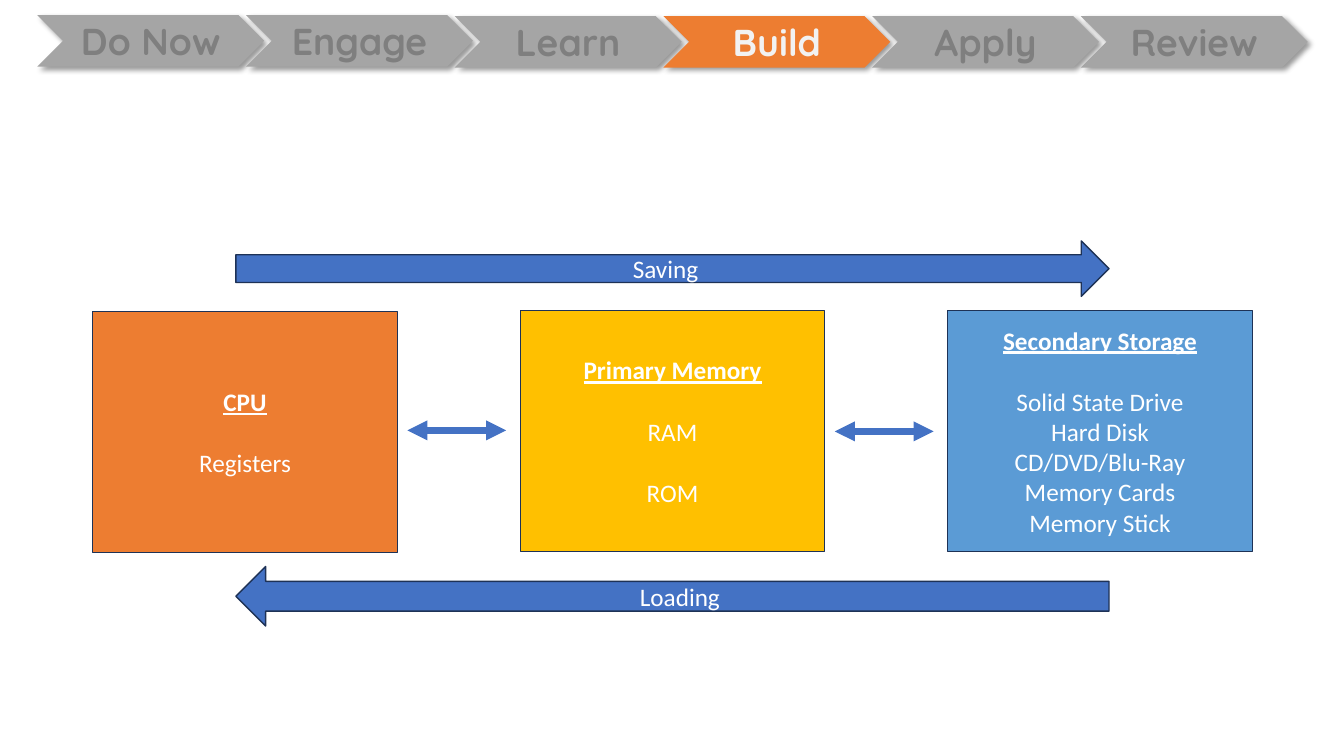
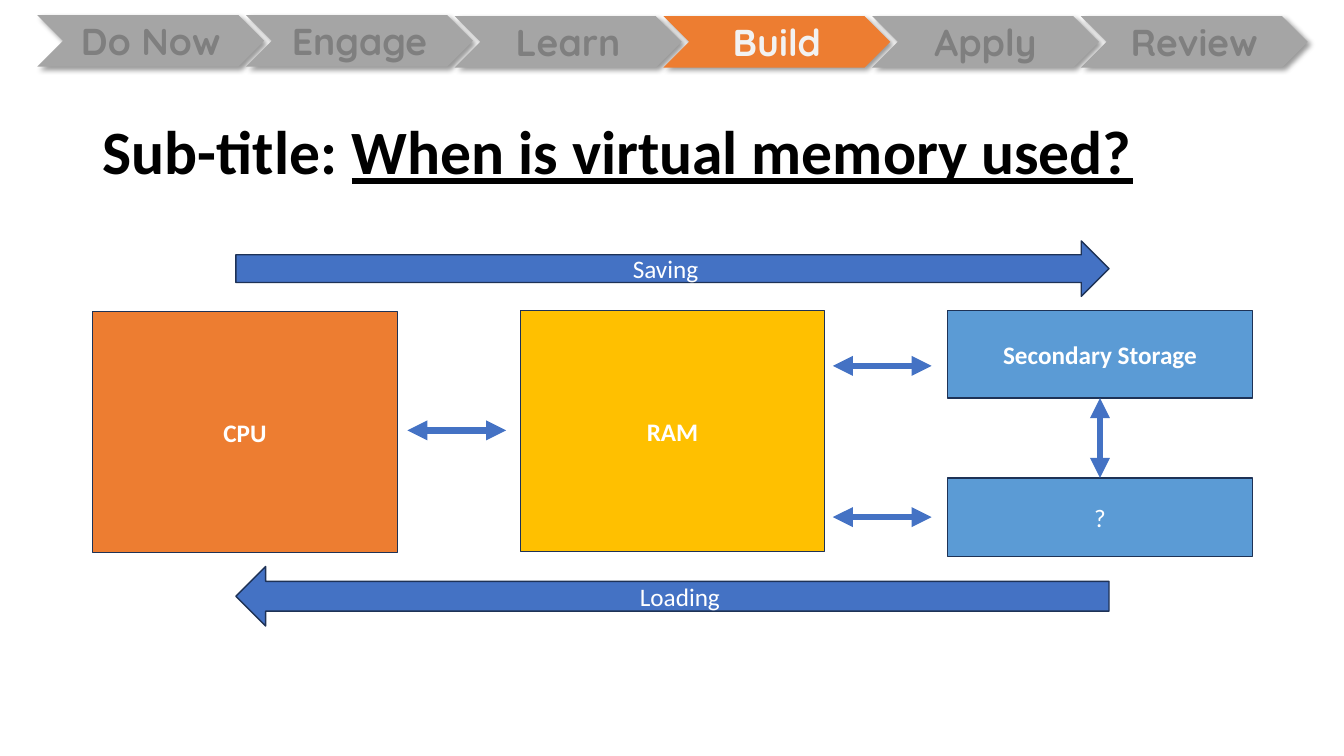
"""Build two slides on how data moves between CPU, memory and storage."""
import pptx
import pptx.dml.color
import pptx.enum.shapes
import pptx.enum.text
import pptx.oxml
import pptx.oxml.ns
import pptx.util

HUES = {
    "grey": "A5A5A5", "dim": "7F7F7F", "pale": "F2F2F2", "white": "FFFFFF",
    "black": "000000", "orange": "ED7D31", "gold": "FFC000",
    "sky": "5B9BD5", "blue": "4472C4", "edge": "1E3256",
}
FONT = "Calibri"
STEPS = ["Do Now", "Engage", "Learn", "Build", "Apply", "Review"]
LEFT, PITCH, WIDE = 0.92, 4.24, 3.02
TOP, HIGH = 3.08, 2.39
LINE = 22

KIND = pptx.enum.shapes.MSO_SHAPE
ALIGN = pptx.enum.text.PP_ALIGN
MIDDLE = pptx.enum.text.MSO_ANCHOR.MIDDLE
inch = pptx.util.Inches


def hue(name):
    return pptx.dml.color.RGBColor.from_string(HUES[name])


def col(num):
    return LEFT + num * PITCH


def node(text):
    head, rest = text.split(" ", 1) if " " in text else (text, "/>")
    space = pptx.oxml.ns.nsdecls("a")
    return pptx.oxml.parse_xml(f"{head} {space} {rest}")


def style(run, size, tint, bold=False, under=False, font=FONT):
    run.font.name = font
    run.font.size = pptx.util.Pt(size)
    run.font.bold = bold
    run.font.underline = under
    run.font.color.rgb = hue(tint)


def shape(slide, kind, area, fill, edge=None):
    item = slide.shapes.add_shape(kind, *map(inch, area))
    item.shadow.inherit = False
    item.fill.solid()
    item.fill.fore_color.rgb = hue(fill)
    if edge:
        item.line.color.rgb = hue(edge)
        item.line.width = pptx.util.Pt(1)
    else:
        item.line.fill.background()
    item.text_frame.vertical_anchor = MIDDLE
    return item


def label(item, text, size=18, tint="white", **look):
    item.text_frame.text = text
    para = item.text_frame.paragraphs[0]
    para.alignment = ALIGN.CENTER
    style(para.runs[0], size, tint, **look)


def steps(slide, now):
    for num, name in enumerate(STEPS):
        live = name == now
        top = 0.15 if num < 2 else 0.16
        item = shape(slide, KIND.CHEVRON, (0.37 + 2.07 * num, top, 2.25, 0.51),
                     "orange" if live else "grey")
        label(item, name, 26.7, "pale" if live else "dim",
              bold=True, font="Quicksand")
        glow = item._element.spPr.find(pptx.oxml.ns.qn("a:effectLst"))
        glow.append(node(
            '<a:outerShdw blurRad="50800" dist="38100" dir="2700000">'
            f'<a:srgbClr val="{HUES["black"]}"><a:alpha val="40000"/>'
            '</a:srgbClr></a:outerShdw>'))


def box(slide, num, fill, head, top=TOP, high=HIGH, **look):
    item = shape(slide, KIND.RECTANGLE, (col(num), top, WIDE, high),
                 fill, "edge")
    label(item, head, **look)
    return item


def items(item, names, gaps):
    for name, gap in zip(names, gaps):
        para = item.text_frame.add_paragraph()
        para.text = name
        para.alignment = ALIGN.CENTER
        para.space_before = pptx.util.Pt(gap)
        style(para.runs[0], 18, "white")


def flows(slide):
    for kind, top, high, name in ((KIND.RIGHT_ARROW, 2.39, 0.55, "Saving"),
                                  (KIND.LEFT_ARROW, 5.62, 0.59, "Loading")):
        item = shape(slide, kind, (2.34, top, 8.66, high), "blue", "edge")
        label(item, name)


def link(slide, start, end):
    line = slide.shapes.add_connector(
        pptx.enum.shapes.MSO_CONNECTOR.STRAIGHT, *map(inch, start + end))
    line.line.color.rgb = hue("blue")
    line.line.width = pptx.util.Pt(4.75)
    for part in ("head", "tail"):
        line.line._get_or_add_ln().append(
            node(f'<a:{part}End type="triangle"/>'))
    line._element.spPr.append(node("<a:effectLst"))
    return line


def bridge(slide, num, level, gap=0.1):
    left = col(num) + WIDE + gap
    link(slide, (left, level), (left + 0.98, level))


def title(slide, lead, rest):
    item = slide.shapes.title
    item.left, item.top, item.width, item.height = map(
        inch, (LEFT, 0.81, 2 * PITCH + WIDE, 1.45))
    frame = item.text_frame
    frame.auto_size = pptx.enum.text.MSO_AUTO_SIZE.NONE
    frame.vertical_anchor = MIDDLE
    frame.text = lead
    para = frame.paragraphs[0]
    para.alignment = ALIGN.LEFT
    para.line_spacing = 0.9
    style(para.runs[0], 44, "black", bold=True)
    run = para.add_run()
    run.text = rest
    style(run, 44, "black", bold=True, under=True)


def base(deck, layout):
    slide = deck.slides.add_slide(deck.slide_layouts.get_by_name(layout))
    steps(slide, "Build")
    flows(slide)
    bridge(slide, 0, 4.27)
    return slide


def types(deck):
    slide = base(deck, "Blank")
    look = {"bold": True, "under": True}
    chip = box(slide, 0, "orange", "CPU", TOP + 0.01, **look)
    items(chip, ["Registers"], [LINE])
    main_store = box(slide, 1, "gold", "Primary Memory", **look)
    items(main_store, ["RAM", "ROM"], [LINE, LINE])
    store = box(slide, 2, "sky", "Secondary Storage", **look)
    items(store, ["Solid State Drive", "Hard Disk", "CD/DVD/Blu-Ray",
                  "Memory Cards", "Memory Stick"], [LINE, 0, 0, 0, 0])
    bridge(slide, 1, 4.28)


def virtual(deck):
    slide = base(deck, "Title Only")
    title(slide, "Sub-title: ", "When is virtual memory used?")
    box(slide, 0, "orange", "CPU", TOP + 0.01, bold=True)
    box(slide, 1, "gold", "RAM", bold=True)
    store = box(slide, 2, "sky", "Secondary Storage", high=0.87, bold=True)
    query = box(slide, 2, "sky", "?", 4.74, 0.78)
    for level in (3.63, 5.13):
        bridge(slide, 1, level, 0.08)
    mid = col(2) + WIDE / 2
    line = link(slide, (mid, 4.74), (mid, 3.95))
    line.begin_connect(query, 0)
    line.end_connect(store, 2)


def main():
    deck = pptx.Presentation()
    deck.slide_width, deck.slide_height = inch(13.33), inch(7.5)
    types(deck)
    virtual(deck)
    deck.save("out.pptx")


if __name__ == "__main__":
    main()
